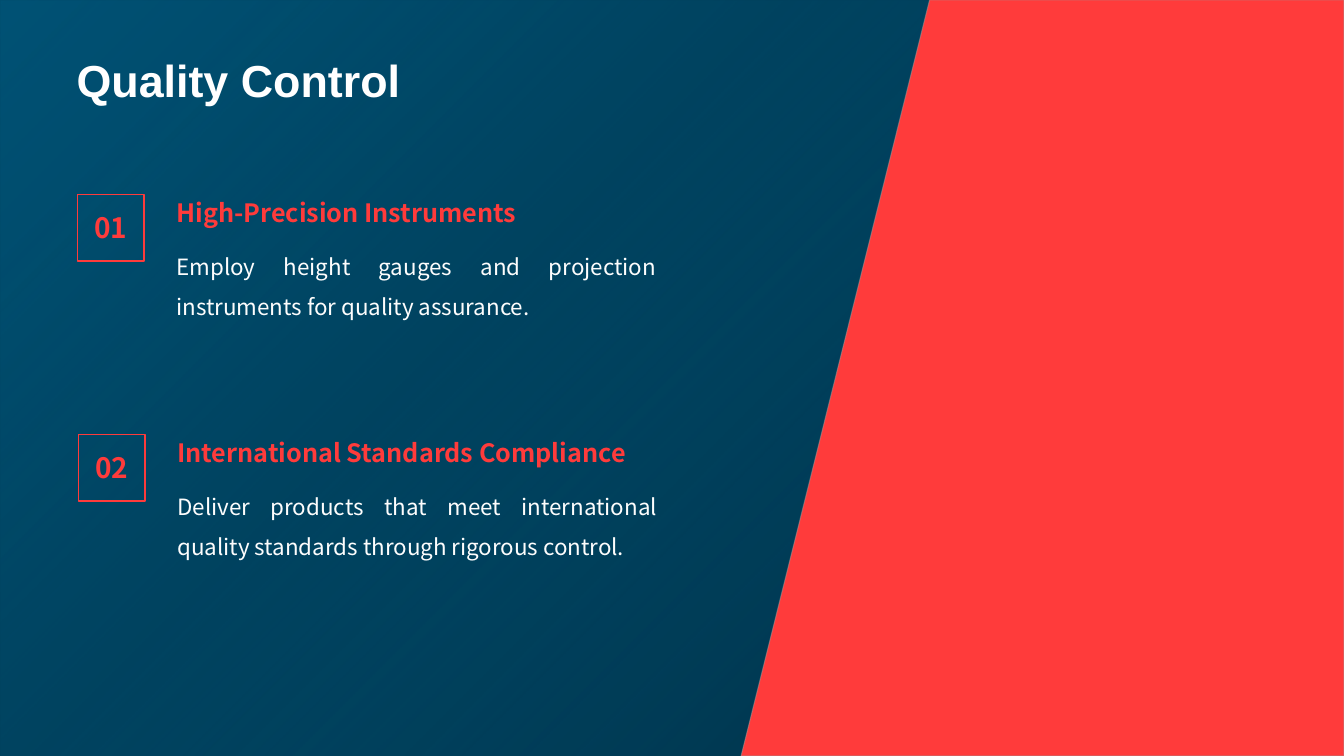
from dataclasses import dataclass
from typing import Any

import lxml.etree
import pptx
import pptx.dml.color
import pptx.enum.shapes
import pptx.enum.text
import pptx.oxml.ns
import pptx.util

Inches = pptx.util.Inches
Pt = pptx.util.Pt
Align = pptx.enum.text.PP_ALIGN
Anchor = pptx.enum.text.MSO_ANCHOR
RECT = pptx.enum.shapes.MSO_SHAPE.RECTANGLE
qn = pptx.oxml.ns.qn

WIDE, HIGH = 13.33, 7.5
SANS = "Noto Sans CJK SC"
HUES = {"navy": "003248", "blue": "005275", "red": "FF3B3B",
        "white": "FFFFFF", "pale": "FDFDFD", "gray": "999999"}

# Color, font values and paragraph values of each text style
STYLES: dict[str, tuple[str, dict[str, Any], dict[str, Any]]] = {
    "title": ("white", {"name": "Arial", "size": Pt(32), "bold": True}, {}),
    "badge": ("red", {"name": SANS, "size": Pt(20), "bold": True},
              {"alignment": Align.CENTER}),
    "head": ("red", {"name": SANS, "size": Pt(18), "bold": True},
             {"alignment": Align.JUSTIFY}),
    "body": ("pale", {"name": SANS, "size": Pt(16)},
             {"alignment": Align.JUSTIFY, "line_spacing": 1.5}),
}


@dataclass
class Item:
    num: str
    head: str
    body: str
    left: float
    top: float


ITEMS = [
    Item("01", "High-Precision Instruments",
         "Employ height gauges and projection instruments for quality assurance.",
         0.77, 1.93),
    Item("02", "International Standards Compliance",
         "Deliver products that meet international quality standards "
         "through rigorous control.",
         0.78, 4.31),
]


def rgb(hue: str) -> pptx.dml.color.RGBColor:
    return pptx.dml.color.RGBColor.from_string(HUES[hue])


def assign(target: Any, values: dict[str, Any]) -> None:
    for key, value in values.items():
        setattr(target, key, value)


def fade(color: Any, percent: int) -> None:
    """Give a color element an opacity."""
    lxml.etree.SubElement(color, qn("a:alpha"), val=str(percent * 1000))


def write(shape: Any, text: str, style: str, anchor: Any, wrap: bool = True) -> None:
    hue, font, layout = STYLES[style]
    frame = shape.text_frame
    sides = ("left", "top", "right", "bottom")
    assign(frame, {f"margin_{side}": 0 for side in sides})
    assign(frame, {"word_wrap": wrap, "vertical_anchor": anchor})
    para = frame.paragraphs[0]
    assign(para, layout)
    run = para.add_run()
    run.text = text
    assign(run.font, font)
    run.font.color.rgb = rgb(hue)


def add_text(slide: Any, box: tuple[float, ...], text: str, style: str,
             anchor: Any = Anchor.MIDDLE) -> None:
    write(slide.shapes.add_textbox(*map(Inches, box)), text, style, anchor)


def add_rect(slide: Any, box: tuple[float, ...]) -> Any:
    shape = slide.shapes.add_shape(RECT, *map(Inches, box))
    shape.shadow.inherit = False
    return shape


def add_back(slide: Any) -> None:
    fill = slide.background.fill
    fill.solid()
    fill.fore_color.rgb = rgb("navy")
    rect = add_rect(slide, (0, 0, WIDE, HIGH))
    rect.line.fill.background()
    rect.fill.gradient()
    rect.fill.gradient_angle = 135
    stops = rect.fill._fill._gradFill.find(qn("a:gsLst"))
    for stop in list(stops):
        stops.remove(stop)
    for place, hue, percent in ((0, "navy", 100), (17, "navy", 100),
                                (63, "blue", 53), (100, "blue", 100)):
        stop = lxml.etree.SubElement(stops, qn("a:gs"), pos=str(place * 1000))
        color = lxml.etree.SubElement(stop, qn("a:srgbClr"), val=HUES[hue])
        if percent < 100:
            fade(color, percent)


def add_panel(slide: Any) -> None:
    """Draw the slanted red panel on the right."""
    points = [(Inches(x), Inches(y)) for x, y in
              ((9.22, 0), (WIDE, 0), (WIDE, HIGH), (7.35, HIGH))]
    path = slide.shapes.build_freeform(*points[0])
    path.add_line_segments(points[1:], close=True)
    panel = path.convert_to_shape()
    panel.shadow.inherit = False
    panel.fill.solid()
    panel.fill.fore_color.rgb = rgb("red")
    panel.line.width = Pt(0.75)
    panel.line.color.rgb = rgb("gray")
    fade(panel.line._ln.find(".//" + qn("a:srgbClr")), 50)


def add_item(slide: Any, item: Item) -> None:
    left = item.left + 0.98
    add_text(slide, (left, item.top + 0.45, 4.76, 1.78), item.body, "body", Anchor.TOP)
    add_text(slide, (left, item.top - 0.07, 4.77, 0.5), item.head, "head")
    badge = add_rect(slide, (item.left, item.top, 0.66, 0.66))
    badge.fill.background()
    badge.line.color.rgb = rgb("red")
    badge.line.width = Pt(1)
    write(badge, item.num, "badge", Anchor.MIDDLE, wrap=False)


def main() -> None:
    deck = pptx.Presentation()
    assign(deck, {"slide_width": Inches(WIDE), "slide_height": Inches(HIGH)})
    slide = deck.slides.add_slide(deck.slide_layouts[6])
    add_back(slide)
    add_text(slide, (0.76, 0.39, 7.88, 0.79), "Quality Control", "title")
    add_panel(slide)
    for item in ITEMS:
        add_item(slide, item)
    deck.save("out.pptx")


if __name__ == "__main__":
    main()
